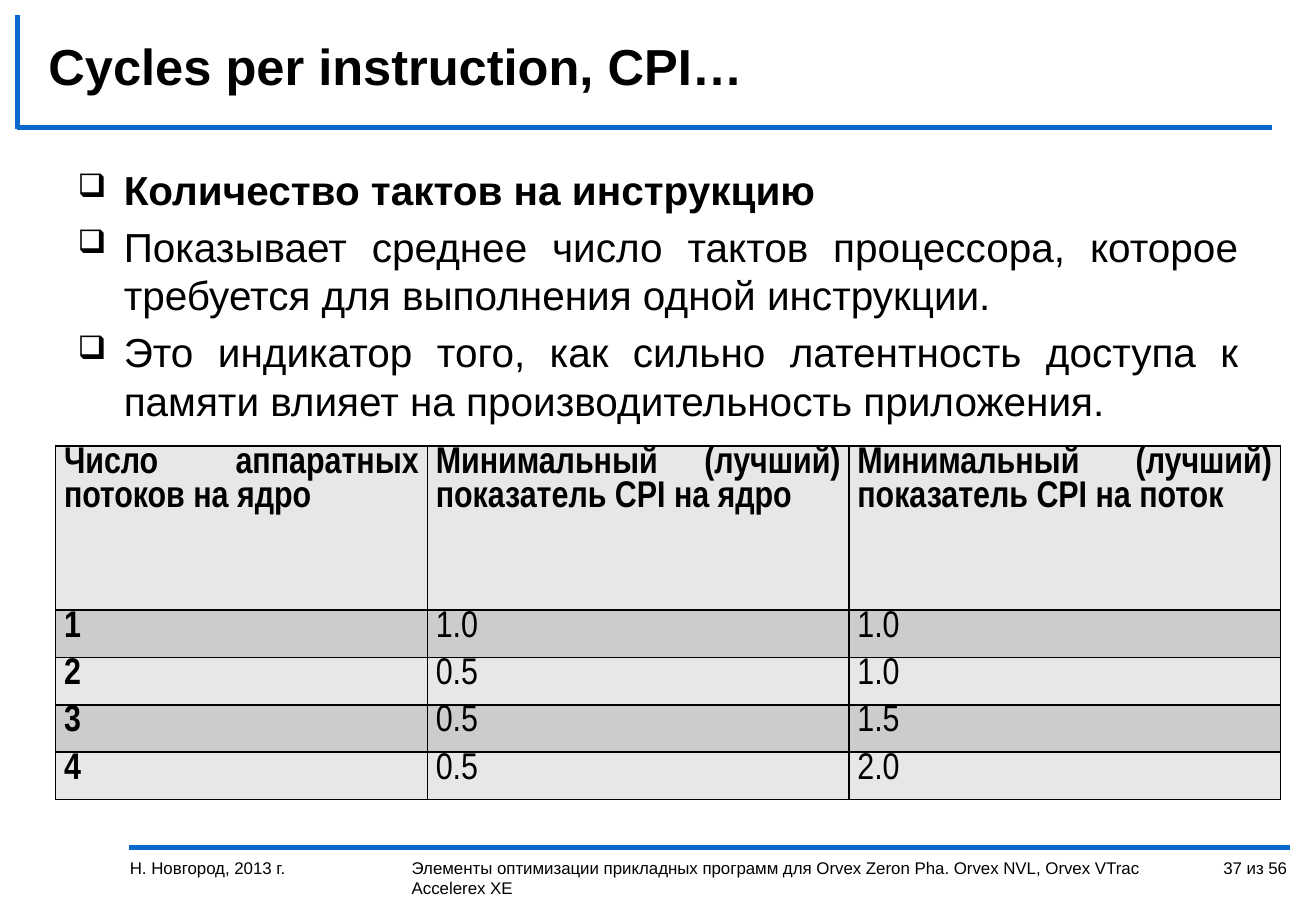
from dataclasses import dataclass

from lxml import etree
from pptx import Presentation
from pptx import util as u
from pptx.dml.color import RGBColor
from pptx.enum import shapes, text
from pptx.oxml import ns


@dataclass(frozen=True)
class Theme:
    accent: str = "0969CD"
    ink: str = "000000"
    light: str = "E7E7E7"
    dark: str = "CCCCCC"
    font: str = "Arial"
    narrow: str = "Arial Narrow"
    title: int = 30
    body: int = 24
    cell: int = 22
    footer: int = 10
    rule: int = 3
    border: int = 1


class SlideBuilder:
    def __init__(self, deck, theme):
        self.deck = deck
        self.theme = theme
        self.page = deck.slides.add_slide(deck.slide_layouts[6])

    def x(self, share):
        return u.Emu(round(self.deck.slide_width * share / 100))

    def y(self, share):
        return u.Emu(round(self.deck.slide_height * share / 100))

    def area(self, left, top, width, height):
        return self.x(left), self.y(top), self.x(width), self.y(height)

    def style(self, para, size, bold=False, font=None):
        for span in para.runs:
            span.font.name = font or self.theme.font
            span.font.size = u.Pt(size)
            span.font.bold = bold
            span.font.color.rgb = RGBColor.from_string(self.theme.ink)

    def rule(self, left, top, right, bottom):
        line = self.page.shapes.add_connector(
            shapes.MSO_CONNECTOR.STRAIGHT,
            self.x(left), self.y(top), self.x(right), self.y(bottom))
        line.line.color.rgb = RGBColor.from_string(self.theme.accent)
        line.line.width = u.Pt(self.theme.rule)
        etree.SubElement(line._element.spPr, ns.qn("a:effectLst"))

    def box(self, area, content, size, bold=False, align=text.PP_ALIGN.LEFT,
            anchor=text.MSO_ANCHOR.TOP):
        box = self.page.shapes.add_textbox(*self.area(*area))
        frame = box.text_frame
        frame.word_wrap = True
        frame.vertical_anchor = anchor
        frame.text = content
        for para in frame.paragraphs:
            para.alignment = align
            self.style(para, size, bold)
        return frame

    def bullets(self, area, items):
        frame = self.box(area, "\n".join(items), self.theme.body,
                         align=text.PP_ALIGN.JUSTIFY)
        for index, para in enumerate(frame.paragraphs):
            para.space_before = u.Pt(self.theme.body * 0.2 if index else 0)
            props = para._p.get_or_add_pPr()
            props.set("marL", str(u.Inches(0.38)))
            props.set("indent", str(-u.Inches(0.38)))
            etree.SubElement(props, ns.qn("a:buSzPct"), val="80000")
            etree.SubElement(props, ns.qn("a:buChar"), char="❑")
            self.style(para, self.theme.body, bold=index == 0)

    def table(self, left, top, columns, heights, rows):
        area = self.area(left, top, sum(columns), sum(heights))
        grid = self.page.shapes.add_table(len(rows), len(columns), *area).table
        for column, width in zip(grid.columns, columns):
            column.width = self.x(width)
        for row, height in zip(grid.rows, heights):
            row.height = self.y(height)
        for r, values in enumerate(rows):
            for c, value in enumerate(values):
                self.cell(grid.cell(r, c), value, bold=r == 0 or c == 0,
                          fill=self.theme.dark if r % 2 else self.theme.light)

    def cell(self, cell, value, bold, fill):
        cell.margin_left = cell.margin_right = u.Inches(0.07)
        cell.margin_top = cell.margin_bottom = 0
        cell.fill.solid()
        cell.fill.fore_color.rgb = RGBColor.from_string(fill)
        cell.text_frame.text = value
        para = cell.text_frame.paragraphs[0]
        para.alignment = text.PP_ALIGN.JUSTIFY
        para.space_after = u.Pt(6)
        self.style(para, self.theme.cell, bold, self.theme.narrow)
        props = cell._tc.get_or_add_tcPr()
        for index, side in enumerate(("lnL", "lnR", "lnT", "lnB")):
            line = etree.Element(ns.qn(f"a:{side}"), w=str(u.Pt(self.theme.border)))
            paint = etree.SubElement(line, ns.qn("a:solidFill"))
            etree.SubElement(paint, ns.qn("a:srgbClr"), val=self.theme.ink)
            props.insert(index, line)


def main():
    deck = Presentation()
    deck.slide_width, deck.slide_height = u.Inches(10.83), u.Inches(7.5)
    theme = Theme()
    slide = SlideBuilder(deck, theme)

    slide.rule(9.79, 93.07, 98.06, 93.07)
    slide.rule(1.33, 14, 96.68, 14)
    slide.rule(1.33, 1.6, 1.33, 14.13)

    slide.box((2.77, 3.07, 91.69, 8.13), "Cycles per instruction, CPI…",
              theme.title, bold=True, anchor=text.MSO_ANCHOR.MIDDLE)
    slide.bullets((4.99, 17.47, 90.03, 29.33), [
        "Количество тактов на инструкцию",
        "Показывает среднее число тактов процессора, которое требуется "
        "для выполнения одной инструкции.",
        "Это индикатор того, как сильно латентность доступа к памяти "
        "влияет на производительность приложения.",
    ])
    slide.table(4.22, 48.97, (28.25, 32.04, 32.78), (18, 5.2, 5.2, 5.2, 5.2), [
        ("Число аппаратных потоков на ядро",
         "Минимальный (лучший) показатель CPI на ядро",
         "Минимальный (лучший) показатель CPI на поток"),
        ("1", "1.0", "1.0"),
        ("2", "0.5", "1.0"),
        ("3", "0.5", "1.5"),
        ("4", "0.5", "2.0"),
    ])

    slide.box((8.96, 93.47, 20.68, 6.53), "Н. Новгород, 2013 г.", theme.footer)
    slide.box((30.38, 93.47, 58.17, 7.07),
              "Элементы оптимизации прикладных программ для Orvex Zeron Pha. "
              "Orvex NVL, Orvex VTrac Accelerex XE", theme.footer)
    slide.box((89.29, 93.47, 9.42, 6.53), "37 из 56", theme.footer,
              align=text.PP_ALIGN.RIGHT)

    deck.save("out.pptx")


if __name__ == "__main__":
    main()
